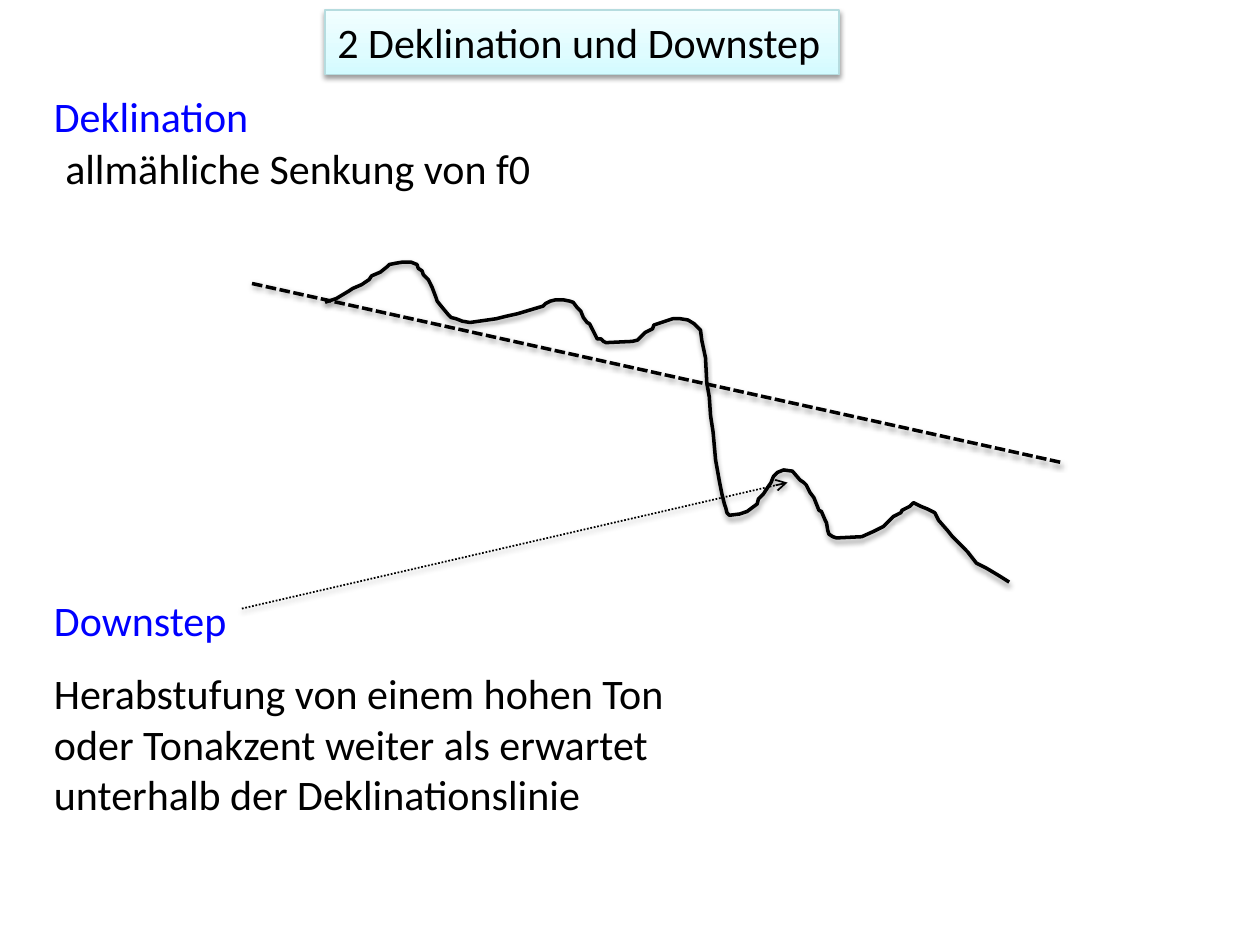
import copy

import lxml.etree
import pptx
import pptx.dml.color
import pptx.enum.dml
import pptx.enum.shapes
import pptx.enum.text
import pptx.oxml.ns
import pptx.util

Inches = pptx.util.Inches
Pt = pptx.util.Pt
RGBColor = pptx.dml.color.RGBColor
Dash = pptx.enum.dml.MSO_LINE
qn = pptx.oxml.ns.qn

BLACK = RGBColor(0x00, 0x00, 0x00)
BLUE = RGBColor(0x00, 0x00, 0xFF)
EDGE = RGBColor(0xB6, 0xDC, 0xDF)
STOPS = [
    (0, RGBColor(0xD3, 0xFB, 0xFF)),
    (0.35, RGBColor(0xDF, 0xFC, 0xFF)),
    (1, RGBColor(0xF2, 0xFE, 0xFF)),
]

PITCH = [
    (258, 240), (267, 237), (277, 231), (280, 229), (287, 226), (293, 222),
    (295, 219), (302, 216), (307, 212), (309, 210), (314, 209), (320, 208),
    (326, 208), (331, 210), (332, 213), (335, 215), (336, 218), (340, 222),
    (343, 228), (346, 236), (347, 239), (351, 244), (356, 250), (358, 252),
    (362, 253), (367, 255), (373, 256), (394, 253), (402, 251), (411, 249),
    (421, 246), (431, 243), (433, 241), (437, 239), (441, 238), (447, 238),
    (452, 239), (455, 240), (458, 244), (461, 247), (463, 252), (466, 256),
    (468, 257), (472, 265), (474, 269), (477, 269), (479, 271), (481, 272),
    (502, 271), (506, 270), (509, 267), (512, 264), (518, 261), (519, 258),
    (525, 256), (534, 253), (540, 253), (546, 254), (551, 257), (556, 262),
    (557, 270), (560, 284), (561, 304), (563, 315), (564, 330), (566, 343),
    (568, 365), (571, 382), (573, 392), (575, 400), (576, 403), (577, 407),
    (579, 409), (587, 408), (593, 406), (601, 400), (602, 396), (606, 392),
    (608, 389), (612, 383), (614, 378), (617, 375), (622, 373), (629, 374),
    (635, 381), (638, 383), (640, 385), (643, 391), (646, 395), (650, 405),
    (652, 406), (655, 413), (656, 415), (657, 421), (658, 424), (661, 426),
    (664, 427), (684, 426), (693, 422), (701, 418), (706, 413), (709, 410),
    (715, 407), (716, 405), (722, 402), (725, 399), (731, 402), (736, 404),
    (742, 407), (745, 413), (752, 421), (756, 426), (761, 431), (768, 438),
    (775, 447), (783, 451), (793, 457), (801, 462),
]


class Sheet:
    font = "Calibri"
    size = Pt(24)

    def __init__(self, slide):
        self.slide = slide
        self.shapes = slide.shapes

    def label(self, shape, words, color):
        frame = shape.text_frame
        frame.word_wrap = True
        frame.vertical_anchor = pptx.enum.text.MSO_ANCHOR.TOP
        par = frame.paragraphs[0]
        par.alignment = pptx.enum.text.PP_ALIGN.LEFT
        run = par.add_run()
        run.text = words
        run.font.name = self.font
        run.font.size = self.size
        run.font.color.rgb = color

    def stroke(self, shape, color, width):
        shape.line.color.rgb = color
        shape.line.width = Pt(width)

    def shade(self, shape):
        add = lxml.etree.SubElement
        group = add(shape._element.spPr, qn("a:effectLst"))
        cast = add(group, qn("a:outerShdw"), blurRad="40000", dist="20000",
                   dir="5400000", rotWithShape="0")
        tone = add(cast, qn("a:srgbClr"), val=str(BLACK))
        add(tone, qn("a:alpha"), val="38000")

    def title(self, left, top, width, height, words):
        box = self.shapes.add_shape(
            pptx.enum.shapes.MSO_SHAPE.RECTANGLE,
            Inches(left), Inches(top), Inches(width), Inches(height))
        box.fill.gradient()
        box.fill.gradient_angle = 90
        group = box._element.spPr.find(".//" + qn("a:gsLst"))
        group.append(copy.deepcopy(group[0]))
        for stop, (place, color) in zip(box.fill.gradient_stops, STOPS):
            stop.position = place
            stop.color.rgb = color
        self.stroke(box, EDGE, 0.75)
        self.shade(box)
        self.label(box, words, BLACK)

    def text(self, left, top, width, height, words, color=BLACK):
        box = self.shapes.add_textbox(
            Inches(left), Inches(top), Inches(width), Inches(height))
        self.label(box, words, color)

    def curve(self, points, width):
        pen = self.shapes.build_freeform(*points[0], scale=Inches(0.01))
        pen.add_line_segments(points[1:], close=False)
        shape = pen.convert_to_shape()
        shape.fill.background()
        self.stroke(shape, BLACK, width)
        self.shade(shape)

    def line(self, start, end, width, dash, arrow=False):
        link = self.shapes.add_connector(
            pptx.enum.shapes.MSO_CONNECTOR.STRAIGHT,
            *map(Inches, start + end))
        self.stroke(link, BLACK, width)
        link.line.dash_style = dash
        if arrow:
            line = link._element.spPr.find(qn("a:ln"))
            lxml.etree.SubElement(line, qn("a:tailEnd"), type="arrow")
        self.shade(link)


def main():
    deck = pptx.Presentation()
    deck.slide_width = Inches(10)
    deck.slide_height = Inches(7.5)
    sheet = Sheet(deck.slides.add_slide(deck.slide_layouts[6]))

    sheet.title(2.58, 0.08, 4.08, 0.51, "2 Deklination und Downstep")
    sheet.text(0.33, 0.67, 2, 0.51, "Deklination", BLUE)
    sheet.text(0.42, 1.08, 4.33, 0.51, "allmähliche Senkung von f0")
    sheet.text(0.33, 4.67, 1.92, 0.51, "Downstep", BLUE)
    sheet.text(0.33, 5.25, 5.08, 1.31,
               "Herabstufung von einem hohen Ton oder Tonakzent weiter "
               "als erwartet unterhalb der Deklinationslinie")
    sheet.curve(PITCH, 2)
    sheet.line((2, 2.25), (8.42, 3.67), 2, Dash.SQUARE_DOT)
    sheet.line((1.92, 4.83), (6.25, 3.83), 1, Dash.ROUND_DOT, arrow=True)

    deck.save("out.pptx")


if __name__ == "__main__":
    main()
